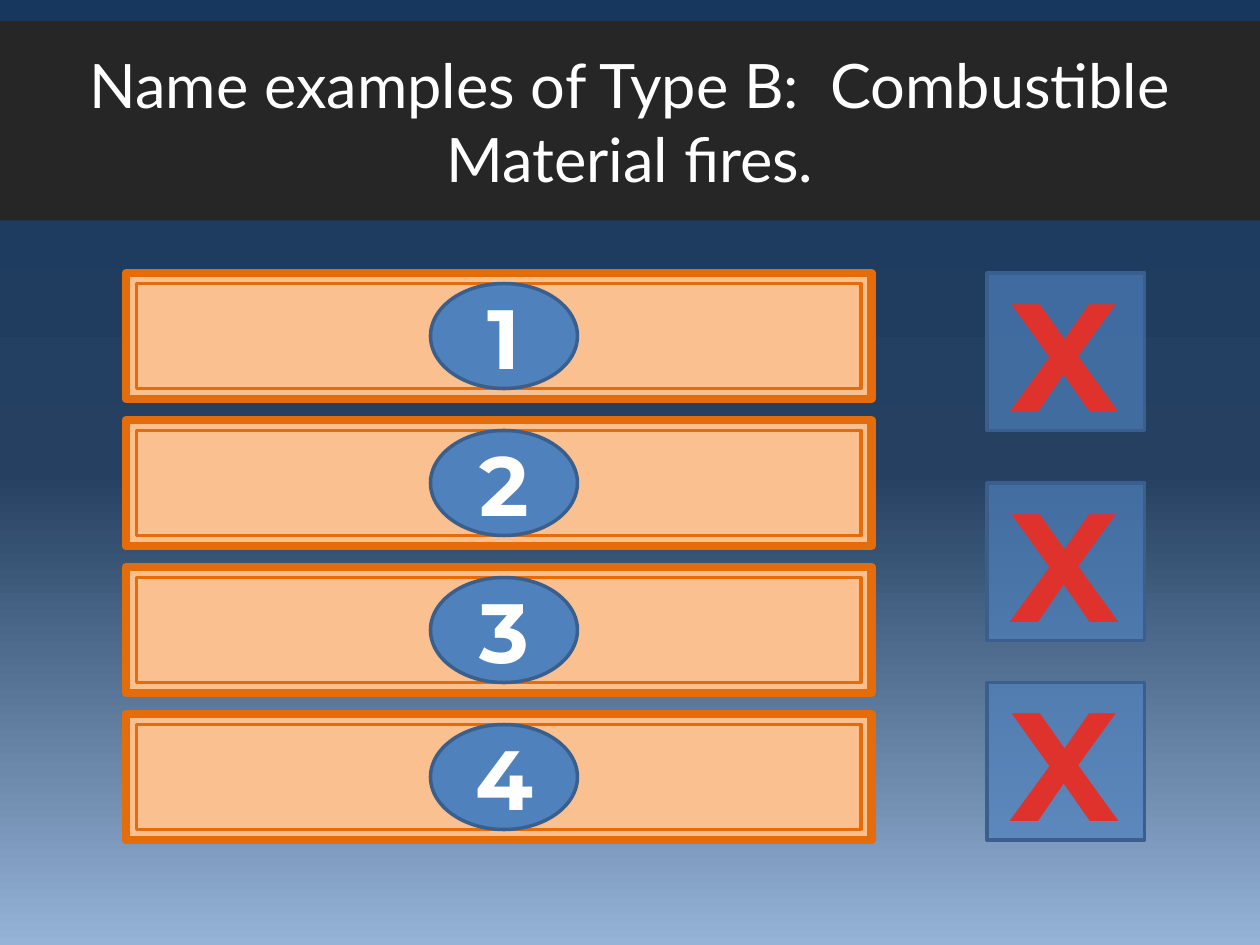
import pptx
import pptx.dml.color
import pptx.enum.dml
import pptx.enum.shapes
import pptx.enum.text
import pptx.oxml
import pptx.oxml.ns
import pptx.util

Pt = pptx.util.Pt
RGBColor = pptx.dml.color.RGBColor
Shape = pptx.enum.shapes.MSO_SHAPE
Anchor = pptx.enum.text.MSO_ANCHOR

NAVY = RGBColor(0x17, 0x37, 0x5E)
DEEP_BLUE = RGBColor(0x25, 0x40, 0x61)
PALE_BLUE = RGBColor(0x95, 0xB3, 0xD7)
BLUE = RGBColor(0x4F, 0x81, 0xBD)
BLUE_EDGE = RGBColor(0x3A, 0x5F, 0x8C)
CHARCOAL = RGBColor(0x26, 0x26, 0x26)
PEACH = RGBColor(0xFA, 0xC0, 0x90)
ORANGE = RGBColor(0xE4, 0x6C, 0x0A)
RED = RGBColor(0xE0, 0x32, 0x2D)
WHITE = RGBColor(0xFF, 0xFF, 0xFF)

SLIDE_WIDTH, SLIDE_HEIGHT = 720, 540
CARD_LEFT, CARD_TOP, CARD_WIDTH, CARD_HEIGHT = 72, 156, 426, 72
CARD_PITCH = 84
CARD_INSET = 6
BADGE_LEFT, BADGE_WIDTH = 246, 84
STRIKE_LEFT, STRIKE_SIZE = 564, 90
STRIKE_TOPS = (156, 276, 390)


def place(shape, left, top, width, height):
    shape.left, shape.top = Pt(left), Pt(top)
    shape.width, shape.height = Pt(width), Pt(height)


def write_text(shape, text, *, size, font, color, bold=False,
               anchor=Anchor.MIDDLE, wrap=True, spacing=None):
    """Fill the shape with one centred paragraph; spacing is in points."""
    frame = shape.text_frame
    frame.word_wrap = wrap
    frame.auto_size = pptx.enum.text.MSO_AUTO_SIZE.NONE
    frame.vertical_anchor = anchor
    paragraph = frame.paragraphs[0]
    paragraph.alignment = pptx.enum.text.PP_ALIGN.CENTER
    run = paragraph.add_run()
    run.text = text
    run.font.size = Pt(size)
    run.font.name = font
    run.font.bold = bold
    run.font.color.rgb = color
    if spacing is not None:
        run.font._element.set("spc", str(round(spacing * 100)))


def add_panel(shapes, kind, box, fill, edge=None, edge_width=2):
    panel = shapes.add_shape(kind, *(Pt(length) for length in box))
    panel.shadow.inherit = False
    panel.fill.solid()
    panel.fill.fore_color.rgb = fill
    if edge is None:
        panel.line.fill.background()
    else:
        panel.line.color.rgb = edge
        panel.line.width = Pt(edge_width)
    return panel


def set_opacity(shape, percent):
    color = shape.fill._xPr.find(".//" + pptx.oxml.ns.qn("a:srgbClr"))
    alpha = pptx.oxml.parse_xml(
        f'<a:alpha {pptx.oxml.ns.nsdecls("a")} val="{percent * 1000}"/>')
    color.append(alpha)


def add_backdrop(shapes):
    backdrop = add_panel(shapes, Shape.RECTANGLE,
                         (0, 0, SLIDE_WIDTH, SLIDE_HEIGHT), NAVY)
    stops = "".join(
        f'<a:gs pos="{percent * 1000}"><a:srgbClr val="{color}"/></a:gs>'
        for percent, color in ((0, NAVY), (50, DEEP_BLUE), (100, PALE_BLUE)))
    gradient = pptx.oxml.parse_xml(
        f'<a:gradFill {pptx.oxml.ns.nsdecls("a")} rotWithShape="1">'
        f'<a:gsLst>{stops}</a:gsLst><a:lin ang="5400000" scaled="0"/>'
        '</a:gradFill>')
    properties = backdrop._element.spPr
    properties.replace(properties.find(pptx.oxml.ns.qn("a:solidFill")), gradient)


def add_title(slide, text):
    title = slide.shapes.title
    place(title, 0, 12, SLIDE_WIDTH, 114)
    title.fill.solid()
    title.fill.fore_color.rgb = CHARCOAL
    write_text(title, text, size=35, font="Lato", color=WHITE)
    # Bring the title in front of the backdrop.
    slide.shapes._spTree.append(title._element)


def add_answer_card(slide, number):
    card = slide.shapes.add_group_shape().shapes
    top = CARD_TOP + (number - 1) * CARD_PITCH
    inner_top = top + CARD_INSET
    inner_height = CARD_HEIGHT - 2 * CARD_INSET
    add_panel(card, Shape.RECTANGLE,
              (CARD_LEFT, top, CARD_WIDTH, CARD_HEIGHT), PEACH, ORANGE, 5)
    add_panel(card, Shape.RECTANGLE,
              (CARD_LEFT + CARD_INSET, inner_top,
               CARD_WIDTH - 2 * CARD_INSET, inner_height), PEACH, ORANGE)
    badge = add_panel(card, Shape.OVAL,
                      (BADGE_LEFT, inner_top, BADGE_WIDTH, inner_height),
                      BLUE, BLUE_EDGE)
    write_text(badge, str(number), size=48, font="Montserrat",
               color=WHITE, bold=True)


def add_strike(slide, top):
    square = add_panel(slide.shapes, Shape.RECTANGLE,
                       (STRIKE_LEFT, top, STRIKE_SIZE, STRIKE_SIZE),
                       BLUE, BLUE_EDGE)
    set_opacity(square, 69)
    mark = slide.shapes.add_textbox(Pt(STRIKE_LEFT + 6), Pt(top - 12),
                                    Pt(76.5), Pt(114))
    write_text(mark, "X", size=88, font="Montserrat", color=RED, bold=True,
               anchor=Anchor.TOP, wrap=False, spacing=0.5)


def main():
    deck = pptx.Presentation()
    deck.slide_width, deck.slide_height = Pt(SLIDE_WIDTH), Pt(SLIDE_HEIGHT)
    title_only = deck.slide_layouts[5]
    slide = deck.slides.add_slide(title_only)
    add_backdrop(slide.shapes)
    add_title(slide, "Name examples of Type B:  Combustible Material fires.")
    for number in (4, 3, 2, 1):
        add_answer_card(slide, number)
    for top in STRIKE_TOPS:
        add_strike(slide, top)
    deck.save("out.pptx")


if __name__ == "__main__":
    main()
